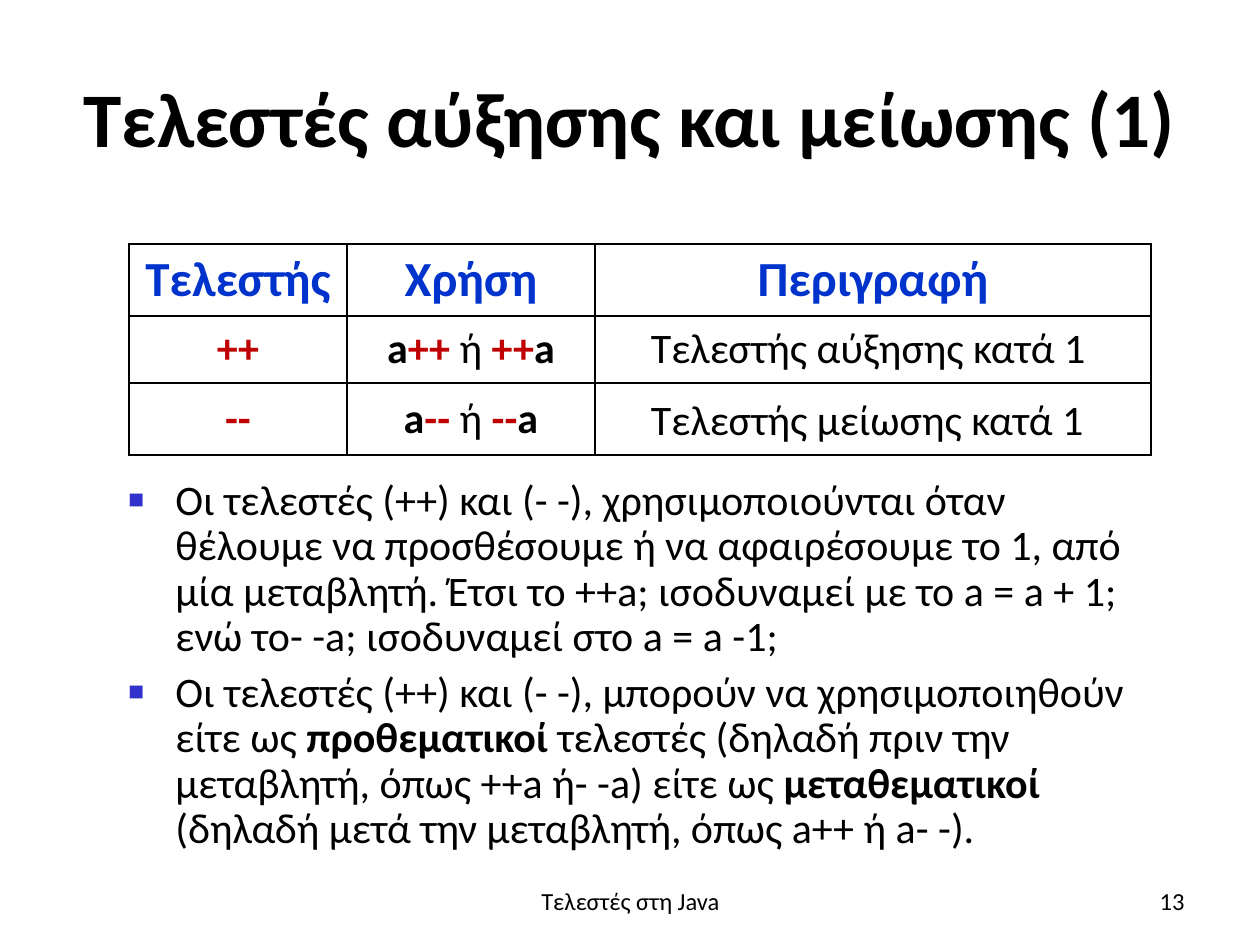
from dataclasses import dataclass

from lxml import etree
from pptx import Presentation
from pptx.dml.color import RGBColor
from pptx.enum import text
from pptx.oxml import ns
from pptx.util import Emu, Pt

PX = 914400 / 126
HANGING = 48


@dataclass(frozen=True)
class Theme:
    font: str = "Calibri"
    ink: str = "000000"
    heading: str = "0033CC"
    operator: str = "C00000"
    bullet: str = "3333CC"
    title_size: float = 44.1
    heading_size: int = 28
    body_size: int = 24
    footer_size: int = 14


THEME = Theme()
ALIGN = text.PP_ALIGN
MIDDLE = text.MSO_ANCHOR.MIDDLE
TOP = text.MSO_ANCHOR.TOP
BOLD = {"bold": True}
OPERATOR = {"bold": True, "color": THEME.operator}
HEADING = {"bold": True, "color": THEME.heading, "size": THEME.heading_size}

COLUMNS = [218, 248, 556]
ROWS = [72, 67, 72]


def usage(operator):
    return [("a", BOLD), (operator + " ", OPERATOR), ("ή ", {}),
            (operator, OPERATOR), ("a", BOLD)]


CELLS = [
    [[(label, HEADING)] for label in ("Τελεστής", "Χρήση", "Περιγραφή")],
    [[("++", OPERATOR)], usage("++"), [("Τελεστής αύξησης κατά 1 ", {})]],
    [[("--", OPERATOR)], usage("--"),
     [("Τελεστής μείωσης κατά 1", {}), (" ", {"size": THEME.heading_size})]],
]

BULLETS = [
    [("Οι τελεστές (++) και (- -), χρησιμοποιούνται όταν θέλουμε να "
      "προσθέσουμε ή να αφαιρέσουμε το 1, από μία μεταβλητή. Έτσι το ++a; "
      "ισοδυναμεί με το a = a + 1; ενώ το- -a; ισοδυναμεί στο a = a -1;", {})],
    [("Οι τελεστές (++) και (- -), μπορούν να χρησιμοποιηθούν είτε ως ", {}),
     ("προθεματικοί ", BOLD),
     ("τελεστές (δηλαδή πριν την μεταβλητή, όπως ++a ή- -a) είτε ως ", {}),
     ("μεταθεματικοί ", BOLD),
     ("(δηλαδή μετά την μεταβλητή, όπως a++ ή a- -).", {})],
]


def px(length):
    return Emu(round(length * PX))


def set_attributes(target, values):
    for name, value in values.items():
        setattr(target, name, value)


def add_element(parent, tag, **attributes):
    element = etree.SubElement(parent, ns.qn(tag))
    for name, value in attributes.items():
        element.set(name, str(value))
    return element


def write_runs(paragraph, runs, size=THEME.body_size):
    for content, style in runs:
        run = paragraph.add_run()
        run.text = content
        set_attributes(run.font, {
            "name": THEME.font,
            "size": Pt(style.get("size", size)),
            "bold": style.get("bold", False),
        })
        run.font.color.rgb = RGBColor.from_string(style.get("color", THEME.ink))


def hang_indent(paragraph):
    properties = paragraph._p.get_or_add_pPr()
    properties.set("marL", str(px(HANGING)))
    properties.set("indent", str(-px(HANGING)))
    return properties


def add_text_frame(slide, box, anchor=MIDDLE):
    frame = slide.shapes.add_textbox(*map(px, box)).text_frame
    set_attributes(frame, {"word_wrap": True, "vertical_anchor": anchor})
    return frame


def add_label(slide, box, content, size, alignment, bold=False):
    paragraph = add_text_frame(slide, box).paragraphs[0]
    paragraph.alignment = alignment
    write_runs(paragraph, [(content, {"bold": bold})], size)


def add_borders(cell):
    properties = cell._tc.get_or_add_tcPr()
    for side in "LRTB":
        line = add_element(properties, f"a:ln{side}", w=Pt(1))
        fill = add_element(line, "a:solidFill")
        add_element(fill, "a:srgbClr", val=THEME.ink)


def fill_cell(cell, runs):
    add_borders(cell)
    cell.fill.background()
    cell.vertical_anchor = MIDDLE
    paragraph = cell.text_frame.paragraphs[0]
    paragraph.alignment = ALIGN.CENTER
    hang_indent(paragraph)
    write_runs(paragraph, runs)


def add_operator_table(slide, left, top):
    frame = slide.shapes.add_table(
        len(ROWS), len(COLUMNS), px(left), px(top), px(sum(COLUMNS)), px(sum(ROWS)))
    table = frame.table
    set_attributes(table, {"first_row": False, "horz_banding": False})
    for column, width in zip(table.columns, COLUMNS):
        column.width = px(width)
    for row, height, contents in zip(table.rows, ROWS, CELLS):
        row.height = px(height)
        for cell, runs in zip(row.cells, contents):
            fill_cell(cell, runs)


def add_bullets(slide, box):
    frame = add_text_frame(slide, box, TOP)
    for index, runs in enumerate(BULLETS):
        paragraph = frame.add_paragraph() if index else frame.paragraphs[0]
        set_attributes(paragraph, {"line_spacing": 0.9, "space_after": Pt(6)})
        properties = hang_indent(paragraph)
        color = add_element(properties, "a:buClr")
        add_element(color, "a:srgbClr", val=THEME.bullet)
        add_element(properties, "a:buSzPct", val=120000)
        add_element(properties, "a:buFont", typeface=THEME.font)
        add_element(properties, "a:buChar", char="▪")
        write_runs(paragraph, runs)


def main():
    presentation = Presentation()
    set_attributes(presentation, {"slide_width": px(1260), "slide_height": px(945)})
    slide = presentation.slides.add_slide(presentation.slide_layouts[6])
    add_label(slide, (15, 38, 1230, 158), "Τελεστές αύξησης και μείωσης (1)",
              THEME.title_size, ALIGN.CENTER, bold=True)
    add_operator_table(slide, 129, 244)
    add_bullets(slide, (115, 473, 1052, 389))
    add_label(slide, (431, 876, 399, 50), "Τελεστές στη Java",
              THEME.footer_size, ALIGN.CENTER)
    add_label(slide, (903, 876, 294, 50), "13", THEME.footer_size, ALIGN.RIGHT)
    presentation.save("out.pptx")


if __name__ == "__main__":
    main()
